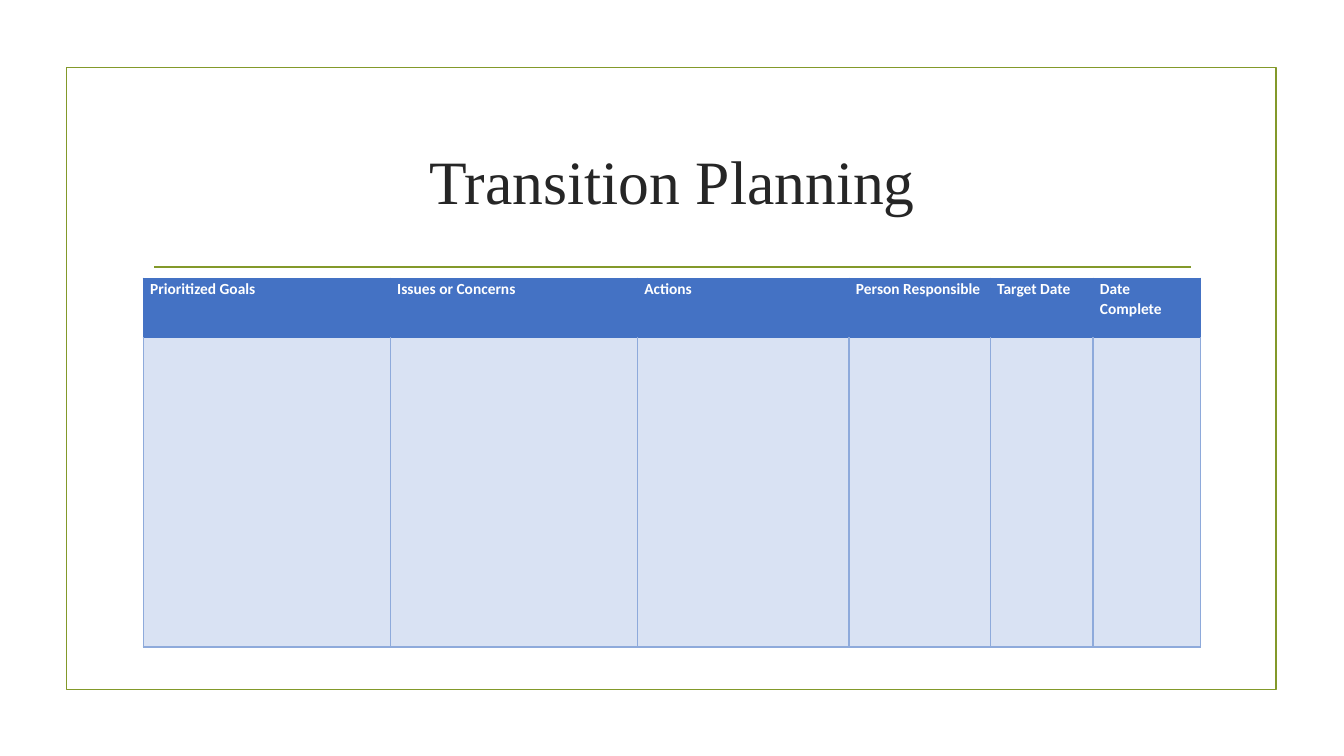
from dataclasses import dataclass

from lxml import etree
from pptx import Presentation
from pptx.dml.color import RGBColor
from pptx.enum.shapes import MSO_CONNECTOR, MSO_SHAPE
from pptx.enum.text import MSO_ANCHOR, PP_ALIGN
from pptx.oxml.ns import qn
from pptx.slide import Slide
from pptx.table import _Cell
from pptx.util import Inches, Pt

RECTANGLE = MSO_SHAPE.RECTANGLE
STRAIGHT = MSO_CONNECTOR.STRAIGHT
MIDDLE = MSO_ANCHOR.MIDDLE
TOP = MSO_ANCHOR.TOP
CENTER = PP_ALIGN.CENTER
LEFT = PP_ALIGN.LEFT

COLORS = {
    "olive": "83992A",
    "title": "262626",
    "header": "4472C4",
    "body": "D9E2F3",
    "grid": "8EAADB",
    "white": "FFFFFF",
}
TITLE_ONLY = 5
BORDER_SIDES = ("a:lnL", "a:lnR", "a:lnT", "a:lnB")


@dataclass
class Column:
    heading: str
    width: float


COLUMNS = [
    Column("Prioritized Goals", 2.45),
    Column("Issues or Concerns", 2.45),
    Column("Actions", 2.1),
    Column("Person Responsible", 1.4),
    Column("Target Date", 1.02),
    Column("Date Complete", 1.07),
]
ROW_HEIGHTS = (0.59, 3.07)


def color(name: str) -> RGBColor:
    return RGBColor.from_string(COLORS[name])


def add_frame(page: Slide) -> None:
    frame = page.shapes.add_shape(
        RECTANGLE, Inches(0.66), Inches(0.67), Inches(12), Inches(6.17))
    frame.shadow.inherit = False
    frame.fill.background()
    frame.line.color.rgb = color("olive")
    frame.line.width = Pt(1.25)


def add_title_rule(page: Slide) -> None:
    rule = page.shapes.add_connector(
        STRAIGHT, Inches(1.53), Inches(2.65), Inches(11.81), Inches(2.65))
    rule.line.color.rgb = color("olive")
    rule.line.width = Pt(1.25)
    etree.SubElement(rule._element.spPr, qn("a:effectLst"))


def format_title(page: Slide, text: str) -> None:
    title = page.shapes.title
    title.left, title.top = Inches(1.42), Inches(1.07)
    title.width, title.height = Inches(10.5), Inches(1.43)
    title.text_frame.text = text
    title.text_frame.vertical_anchor = MIDDLE
    para = title.text_frame.paragraphs[0]
    para.alignment = CENTER
    font = para.runs[0].font
    font.name, font.size = "Times New Roman", Pt(44)
    font.color.rgb = color("title")


def style_cell(cell: _Cell, fill: str, border: str) -> None:
    """Set margins, borders and fill; borders must precede the fill in the XML."""
    cell.margin_left = cell.margin_right = Inches(0.07)
    cell.margin_top = cell.margin_bottom = 0
    cell.vertical_anchor = TOP
    properties = cell._tc.get_or_add_tcPr()
    for side in BORDER_SIDES:
        line = etree.SubElement(properties, qn(side), w=str(Pt(1)))
        solid = etree.SubElement(line, qn("a:solidFill"))
        etree.SubElement(solid, qn("a:srgbClr"), val=COLORS[border])
    cell.fill.solid()
    cell.fill.fore_color.rgb = color(fill)


def write_heading(cell: _Cell, text: str) -> None:
    cell.text_frame.text = text
    para = cell.text_frame.paragraphs[0]
    para.alignment = LEFT
    para.line_spacing = 1.07
    font = para.runs[0].font
    font.name, font.size, font.bold = "Calibri", Pt(11), True
    font.color.rgb = color("white")


def add_planning_table(page: Slide) -> None:
    table = page.shapes.add_table(
        len(ROW_HEIGHTS), len(COLUMNS), Inches(1.42), Inches(2.76),
        Inches(sum(column.width for column in COLUMNS)),
        Inches(sum(ROW_HEIGHTS))).table
    table.horz_banding = False
    for row, height in zip(table.rows, ROW_HEIGHTS):
        row.height = Inches(height)
    for index, column in enumerate(COLUMNS):
        table.columns[index].width = Inches(column.width)
        # The body comes first so the header keeps its own lower border.
        style_cell(table.cell(1, index), "body", "grid")
        style_cell(table.cell(0, index), "header", "header")
        write_heading(table.cell(0, index), column.heading)
        upper_edge = table.cell(1, index)._tc.tcPr.find(qn("a:lnT"))
        upper_edge.find(".//" + qn("a:srgbClr")).set("val", COLORS["header"])


def main() -> None:
    deck = Presentation()
    deck.slide_width, deck.slide_height = Inches(13.33), Inches(7.5)
    page = deck.slides.add_slide(deck.slide_layouts[TITLE_ONLY])
    page.background.fill.solid()
    page.background.fill.fore_color.rgb = color("white")
    add_frame(page)
    add_title_rule(page)
    format_title(page, "Transition Planning")
    add_planning_table(page)
    deck.save("out.pptx")


if __name__ == "__main__":
    main()
